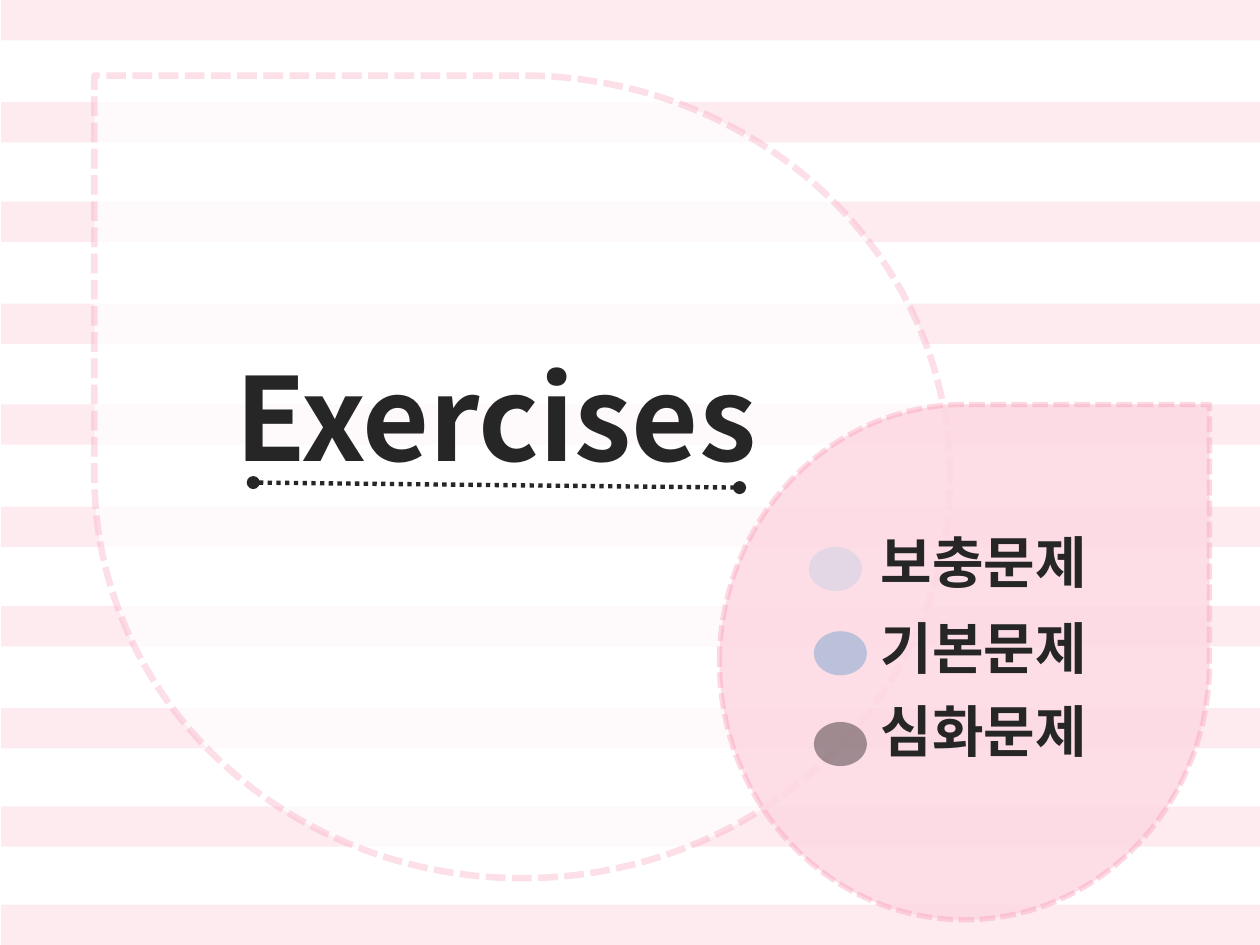
from dataclasses import dataclass

from lxml import etree
from pptx import Presentation
from pptx import util as u
from pptx.dml.color import RGBColor
from pptx.enum import dml, shapes, text
from pptx.oxml.ns import qn

PX = 9144  # EMU per px, 100 px to the inch


@dataclass(frozen=True)
class Theme:
    white: str = "FFFFFF"
    pink: str = "FDD9E3"
    rose: str = "FA98B4"
    ink: str = "262626"
    pale_blue: str = "B9CDE5"
    blue: str = "4C93C7"
    black: str = "000000"
    title_font: str = "Noto Sans CJK KR"
    list_font: str = "Arial"
    asian_font: str = "Noto Sans CJK KR"
    title_size: int = 66
    list_size: int = 32


class Painter:
    def __init__(self, slide, theme):
        self.s = slide
        self.theme = theme

    def paint(self, fmt, color, alpha=100):
        """Give a fill or a line's fill a solid colour with an opacity in percent."""
        fmt.solid()
        fmt.fore_color.rgb = RGBColor.from_string(color)
        if alpha < 100:
            clr = fmt._xPr.find(qn("a:solidFill"))[0]
            etree.SubElement(clr, qn("a:alpha"), val=str(alpha * 1000))

    def shape(self, kind, box, color, alpha):
        sp = self.s.shapes.add_shape(kind, *(v * PX for v in box))
        sp.shadow.inherit = False
        self.paint(sp.fill, color, alpha)
        sp.line.fill.background()
        return sp

    def teardrop(self, box, color, alpha, width, line_alpha, flip=False):
        sp = self.shape(shapes.MSO_SHAPE.TEAR, box, color, alpha)
        self.paint(sp.line.fill, self.theme.rose, line_alpha)
        sp.line.width = u.Pt(width)
        sp.line.dash_style = dml.MSO_LINE.SQUARE_DOT  # sysDash
        if flip:
            sp._element.spPr.find(qn("a:xfrm")).set("flipH", "1")

    def dotted_line(self, start, end, width):
        cx = self.s.shapes.add_connector(
            shapes.MSO_CONNECTOR.STRAIGHT, *(v * PX for v in (*start, *end)))
        self.paint(cx.line.fill, self.theme.ink)
        cx.line.width = u.Pt(width)
        cx.line.dash_style = dml.MSO_LINE.ROUND_DOT  # sysDot
        ln = cx.line._get_or_add_ln()
        for tag in ("a:headEnd", "a:tailEnd"):
            etree.SubElement(ln, qn(tag), type="oval")
        etree.SubElement(cx._element.spPr, qn("a:effectLst"))

    def label(self, box, words, size, font, align=text.PP_ALIGN.LEFT,
              anchor=text.MSO_ANCHOR.TOP):
        tf = self.s.shapes.add_textbox(*(v * PX for v in box)).text_frame
        tf.word_wrap = True
        tf.vertical_anchor = anchor
        p = tf.paragraphs[0]
        p.alignment = align
        r = p.add_run()
        r.text = words
        r.font.size = u.Pt(size)
        r.font.bold = True
        r.font.name = font
        r.font.color.rgb = RGBColor.from_string(self.theme.ink)
        etree.SubElement(r.font._element, qn("a:ea"), typeface=self.theme.asian_font)


def main():
    prs = Presentation()
    prs.slide_width, prs.slide_height = 1000 * PX, 750 * PX
    t = Theme()
    d = Painter(prs.slides.add_slide(prs.slide_layouts[6]), t)
    d.paint(d.s.background.fill, t.white)

    # Striped background
    for top in (0, 81, 160, 241, 321, 402, 481, 562, 640, 718):
        d.shape(shapes.MSO_SHAPE.RECTANGLE, (1, top, 1000, 32), t.pink, 50)

    # Large and small drops
    d.teardrop((75, 60, 679, 637), t.white, 71, 3.75, 31, flip=True)
    d.teardrop((571, 321, 389, 409), t.pink, 88, 3, 37)

    # Title and its underline
    d.dotted_line((201, 383), (587, 387), 2.5)
    d.label((122, 252, 543, 156), "Exercises", t.title_size, t.title_font,
            text.PP_ALIGN.CENTER, text.MSO_ANCHOR.MIDDLE)

    # Exercise levels: dot position, dot colour, label top, label
    levels = (
        (642, 434, t.pale_blue, 414, "보충문제"),
        (646, 501, t.blue, 482, "기본문제"),
        (646, 573, t.black, 548, "심화문제"),
    )
    for left, top, color, label_top, words in levels:
        d.shape(shapes.MSO_SHAPE.OVAL, (left, top, 42, 35), color, 37)
        d.label((689, label_top, 241, 64), words, t.list_size, t.list_font)

    prs.save("out.pptx")


if __name__ == "__main__":
    main()
